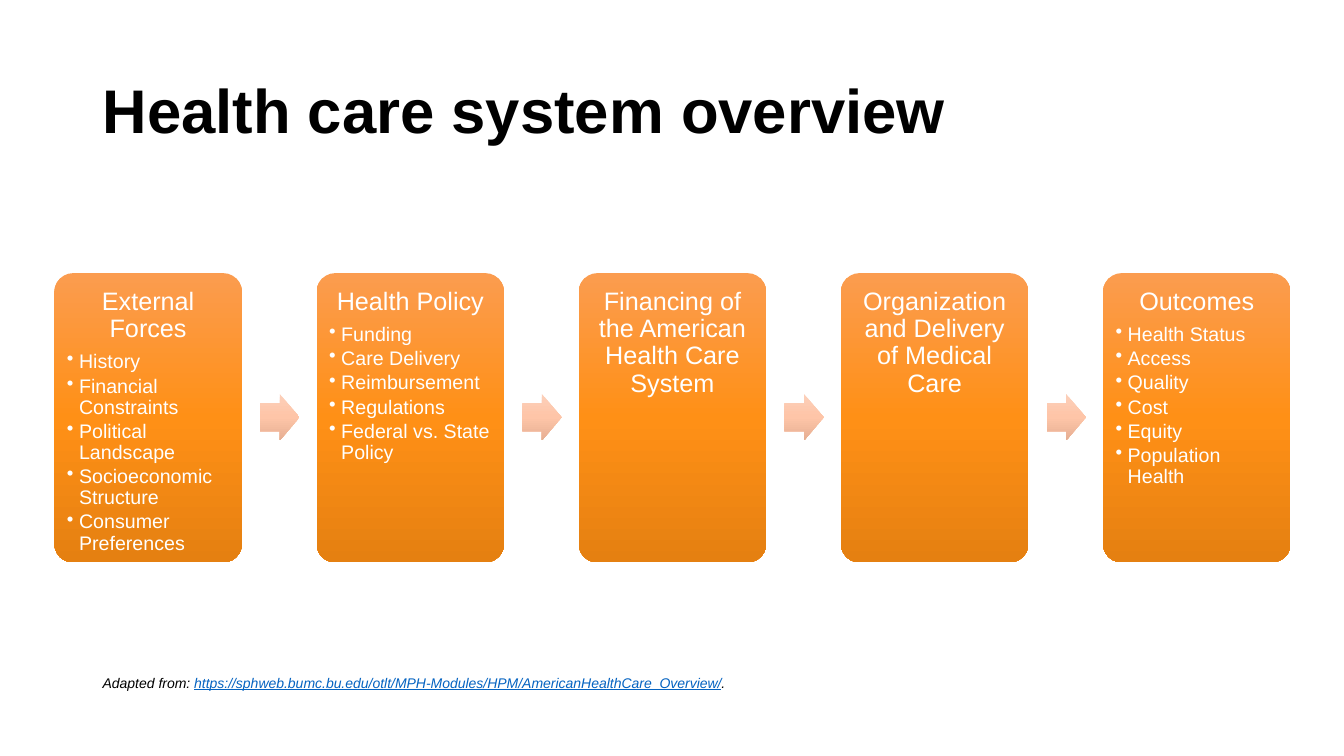
"""Build the health care system overview slide: five cards joined by arrows."""
from copy import deepcopy

from lxml.etree import SubElement
from pptx import Presentation
from pptx.dml.color import RGBColor
from pptx.enum.shapes import MSO_SHAPE
from pptx.enum.text import MSO_ANCHOR, PP_ALIGN
from pptx.oxml.ns import qn
from pptx.util import Inches, Pt

COLORS = {
    "text": "000000",
    "card_text": "FFFFFF",
    "link": "0563C1",
    "card": ["FB9C4F", "FF9016", "E58011"],
    "arrow": ["FCCFB9", "FEC5A8", "E5AE92"],
}


def add_text(paragraph, text, size, color, bold=False, italic=False,
             underline=False, align=None, line=None, after=None, bullet=False):
    if bullet:
        properties = paragraph._p.get_or_add_pPr()
        properties.set("marL", str(Inches(0.12)))
        properties.set("indent", str(Inches(-0.12)))
        SubElement(properties, qn("a:buChar")).set("char", "•")
    if align is not None:
        paragraph.alignment = align
    if line is not None:
        paragraph.line_spacing = line
    if after is not None:
        paragraph.space_after = Pt(after)
    run = paragraph.add_run()
    run.text = text
    font = run.font
    font.name, font.size = "Arial", Pt(size)
    font.bold, font.italic, font.underline = bold, italic, underline
    font.color.rgb = RGBColor.from_string(COLORS[color])


def add_block(kind, left, top, width, height, colors):
    block = slide.shapes.add_shape(
        kind, Inches(left), Inches(top), Inches(width), Inches(height))
    block.shadow.inherit = False
    block.line.fill.background()
    block.fill.gradient()
    block.fill.gradient_angle = 270
    stop_list = block._element.spPr.find(".//" + qn("a:gsLst"))
    stop_list.append(deepcopy(stop_list[0]))
    for stop, position, color in zip(block.fill.gradient_stops, (0, 0.5, 1), COLORS[colors]):
        stop.position = position
        stop.color.rgb = RGBColor.from_string(color)
    return block


presentation = Presentation()
presentation.slide_width, presentation.slide_height = Inches(13.33), Inches(7.5)
slide = presentation.slides.add_slide(presentation.slide_layouts[6])

title = slide.shapes.add_textbox(Inches(0.92), Inches(0.4), Inches(11.5), Inches(1.45)).text_frame
title.word_wrap = True
title.vertical_anchor = MSO_ANCHOR.MIDDLE
add_text(title.paragraphs[0], "Health care system overview", 44, "text", bold=True, line=0.9)

stages = [
    ("External Forces", ["History", "Financial Constraints", "Political Landscape",
                         "Socioeconomic Structure", "Consumer Preferences"]),
    ("Health Policy", ["Funding", "Care Delivery", "Reimbursement", "Regulations",
                       "Federal vs. State Policy"]),
    ("Financing of the American Health Care System", []),
    ("Organization and Delivery of Medical Care", []),
    ("Outcomes", ["Health Status", "Access", "Quality", "Cost", "Equity", "Population Health"]),
]
first_left, pitch = 0.54, 2.6

for index, (heading, topics) in enumerate(stages):
    left = first_left + index * pitch
    card = add_block(MSO_SHAPE.ROUNDED_RECTANGLE, left, 2.71, 1.86, 2.87, "card")
    card.adjustments[0] = 0.1
    content = card.text_frame
    content.word_wrap = True
    content.vertical_anchor = MSO_ANCHOR.TOP
    content.margin_left = content.margin_right = content.margin_bottom = Inches(0.07)
    content.margin_top = Inches(0.1)
    add_text(content.paragraphs[0], heading, 18, "card_text",
             align=PP_ALIGN.CENTER, line=0.9, after=6.3)
    for topic in topics:
        add_text(content.add_paragraph(), topic, 14, "card_text",
                 align=PP_ALIGN.LEFT, line=0.9, after=2.1, bullet=True)
    if index < len(stages) - 1:
        arrow = add_block(MSO_SHAPE.RIGHT_ARROW, left + 2.04, 3.91, 0.39, 0.46, "arrow")
        arrow.adjustments[0] = 0.6
        arrow.adjustments[1] = 0.5

credit = slide.shapes.add_textbox(Inches(0.92), Inches(6.64), Inches(9.24), Inches(0.27)).text_frame
credit.word_wrap = True
citation = credit.paragraphs[0]
add_text(citation, "Adapted from: ", 10, "text", italic=True)
add_text(citation, "https://sphweb.bumc.bu.edu/otlt/MPH-Modules/HPM/AmericanHealthCare_Overview/",
         10, "link", italic=True, underline=True)
add_text(citation, ".", 10, "text", italic=True)

presentation.save("out.pptx")
